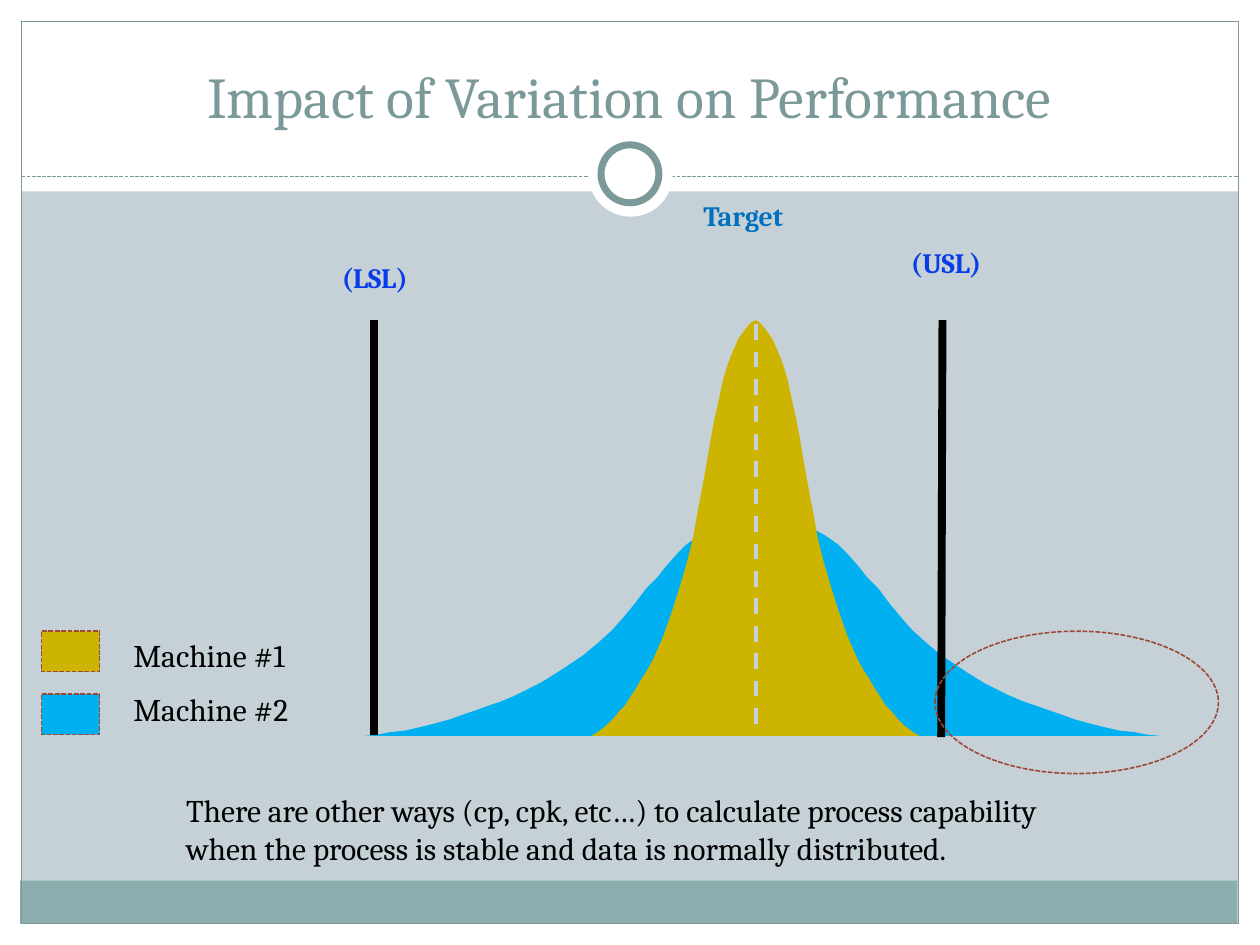
"""Build a slide comparing two machine distributions against specification limits."""
from lxml.etree import SubElement
from pptx import Presentation
from pptx.dml.color import RGBColor
from pptx.enum.dml import MSO_LINE as DASH
from pptx.enum.shapes import MSO_CONNECTOR, MSO_SHAPE as SHAPE
from pptx.enum.text import MSO_ANCHOR as ANCHOR, PP_ALIGN as ALIGN
from pptx.oxml.ns import qn
from pptx.util import Inches, Pt

COLORS = {
    "bg": "C5D1D7", "white": "FFFFFF", "footer": "8CADAE", "frame": "7C999A",
    "gold": "CCB400", "blue": "00B0F0", "rust": "9B4936", "black": "000000",
    "limit": "063DE8", "target": "0070C0",
}
FONT = "Cambria"
BASE = 5.84

BANDS = [
    ((0, 7.33, 10, 0.17), "white"),
    ((0, 0, 10, 1.52), "white"),
    ((0, 0, 0.17, 7.5), "white"),
    ((9.83, 0, 0.17, 7.5), "white"),
    ((0.16, 6.99, 9.66, 0.34), "footer"),
]
LEGEND = [("Machine #1", "gold", 5.01, 5.0), ("Machine #2", "blue", 5.51, 5.43)]
LABELS = [
    ("(USL)", (5.68, 1.9, 3.66, 0.52), "limit"),
    ("(LSL)", (1.46, 2.02, 3.03, 0.52), "limit"),
    ("Target", (3.98, 1.53, 3.84, 0.52), "target"),
]
TITLE = "Impact of Variation on Performance"
NOTE = [
    "There are other ways (cp, cpk, etc…) to calculate process capability",
    "when the process is stable and data is normally distributed.",
]
WIDE = [
    (0, 4.07), (0.09, 4.08), (0.2, 4.11), (0.31, 4.15), (0.42, 4.2), (0.51, 4.25),
    (0.61, 4.32), (0.68, 4.39), (0.77, 4.49), (0.84, 4.58), (0.93, 4.67),
    (1.02, 4.79), (1.12, 4.91), (1.2, 5), (1.31, 5.1), (1.43, 5.2), (1.55, 5.28),
    (1.64, 5.34), (1.77, 5.42), (1.87, 5.47), (1.97, 5.52), (2.09, 5.57),
    (2.18, 5.6), (2.29, 5.64), (2.38, 5.67), (2.49, 5.71), (2.6, 5.74),
    (2.72, 5.77), (2.85, 5.8), (2.96, 5.81), (3.06, 5.83), (3.16, BASE),
]
NARROW = [
    (0, 2.54), (0.04, 2.56), (0.09, 2.62), (0.14, 2.69), (0.18, 2.78), (0.22, 2.88),
    (0.26, 3.01), (0.29, 3.15), (0.33, 3.33), (0.36, 3.49), (0.39, 3.67),
    (0.43, 3.89), (0.47, 4.1), (0.5, 4.27), (0.55, 4.47), (0.6, 4.64), (0.65, 4.8),
    (0.69, 4.92), (0.74, 5.06), (0.78, 5.15), (0.82, 5.24), (0.87, 5.33),
    (0.91, 5.39), (0.95, 5.46), (0.99, 5.52), (1.04, 5.6), (1.09, 5.65),
    (1.13, 5.7), (1.19, 5.76), (1.23, 5.79), (1.27, 5.82), (1.31, BASE),
]
CURVES = [
    (WIDE, 6.06, -1, "blue"), (WIDE, 6.04, 1, "blue"),
    (NARROW, 6, -1, "gold"), (NARROW, 5.99, 1, "gold"),
]


def rgb(name):
    return RGBColor.from_string(COLORS[name])


def style(sp, fill=None, line=None, width=0.75, dash=None):
    sp.shadow.inherit = False
    if fill:
        sp.fill.solid()
        sp.fill.fore_color.rgb = rgb(fill)
    else:
        sp.fill.background()
    if line:
        sp.line.color.rgb = rgb(line)
        sp.line.width = Pt(width)
        if dash:
            sp.line.dash_style = dash
    else:
        sp.line.fill.background()


def add_shape(s, kind, box, **look):
    style(s.shapes.add_shape(kind, *map(Inches, box)), **look)


def add_line(s, start, end, color, width, dash=None):
    ln = s.shapes.add_connector(MSO_CONNECTOR.STRAIGHT, *map(Inches, start + end))
    ln.line.color.rgb = rgb(color)
    ln.line.width = Pt(width)
    if dash:
        ln.line.dash_style = dash
    SubElement(ln._element.spPr, qn("a:effectLst"))


def add_text(s, lines, box, size, color, bold=False, align=ALIGN.LEFT, anchor=ANCHOR.TOP):
    tf = s.shapes.add_textbox(*map(Inches, box)).text_frame
    tf.word_wrap = True
    tf.vertical_anchor = anchor
    tf.text = "\n".join(lines)
    for p in tf.paragraphs:
        p.alignment = align
        for r in p.runs:
            r.font.name = FONT
            r.font.size = Pt(size)
            r.font.bold = bold
            r.font.color.rgb = rgb(color)


def add_curve(s, profile, center, side, color):
    points = [(Inches(center + side * dx), Inches(y)) for dx, y in profile]
    fb = s.shapes.build_freeform(*points[0], scale=1.0)
    fb.add_line_segments(points[1:] + [(Inches(center), Inches(BASE))], close=True)
    style(fb.convert_to_shape(), fill=color)


def main():
    prs = Presentation()
    prs.slide_width, prs.slide_height = Inches(10), Inches(7.5)
    s = prs.slides.add_slide(prs.slide_layouts[6])
    s.background.fill.solid()
    s.background.fill.fore_color.rgb = rgb("bg")

    for box, color in BANDS:
        add_shape(s, SHAPE.RECTANGLE, box, fill=color)
    add_shape(s, SHAPE.RECTANGLE, (0.17, 0.17, 9.66, 7.16), line="frame")
    add_line(s, (0.17, 1.4), (9.83, 1.4), "frame", 0.75, DASH.SQUARE_DOT)
    add_shape(s, SHAPE.OVAL, (4.67, 1.05, 0.67, 0.67), fill="white")
    add_shape(s, SHAPE.OVAL, (4.77, 1.15, 0.46, 0.46), fill="white", line="frame", width=4)
    add_text(s, [TITLE], (0.33, 0.25, 9.33, 0.83), 33, "frame",
             align=ALIGN.CENTER, anchor=ANCHOR.BOTTOM)

    for name, color, key_top, text_top in LEGEND:
        add_shape(s, SHAPE.RECTANGLE, (0.33, key_top, 0.46, 0.32), fill=color,
                  line="rust", width=0.9, dash=DASH.SQUARE_DOT)
        add_text(s, [name], (0.96, text_top, 1.54, 0.4), 18, "black")

    for curve in CURVES:
        add_curve(s, *curve)
    add_line(s, (6, 1.92), (6, 5.97), "bg", 2.25, DASH.DASH)
    add_line(s, (7.48, 2.54), (7.47, 5.85), "black", 4.5)
    for label, box, color in LABELS:
        add_text(s, [label], box, 16, color, bold=True, align=ALIGN.CENTER)
    add_line(s, (2.97, 2.54), (2.97, 5.83), "black", 4.5)
    add_shape(s, SHAPE.OVAL, (7.42, 5.01, 2.25, 1.13), line="rust", width=0.9,
              dash=DASH.SQUARE_DOT)
    add_text(s, NOTE, (1.38, 6.23, 7.96, 0.71), 18, "black")
    prs.save("out.pptx")


if __name__ == "__main__":
    main()
